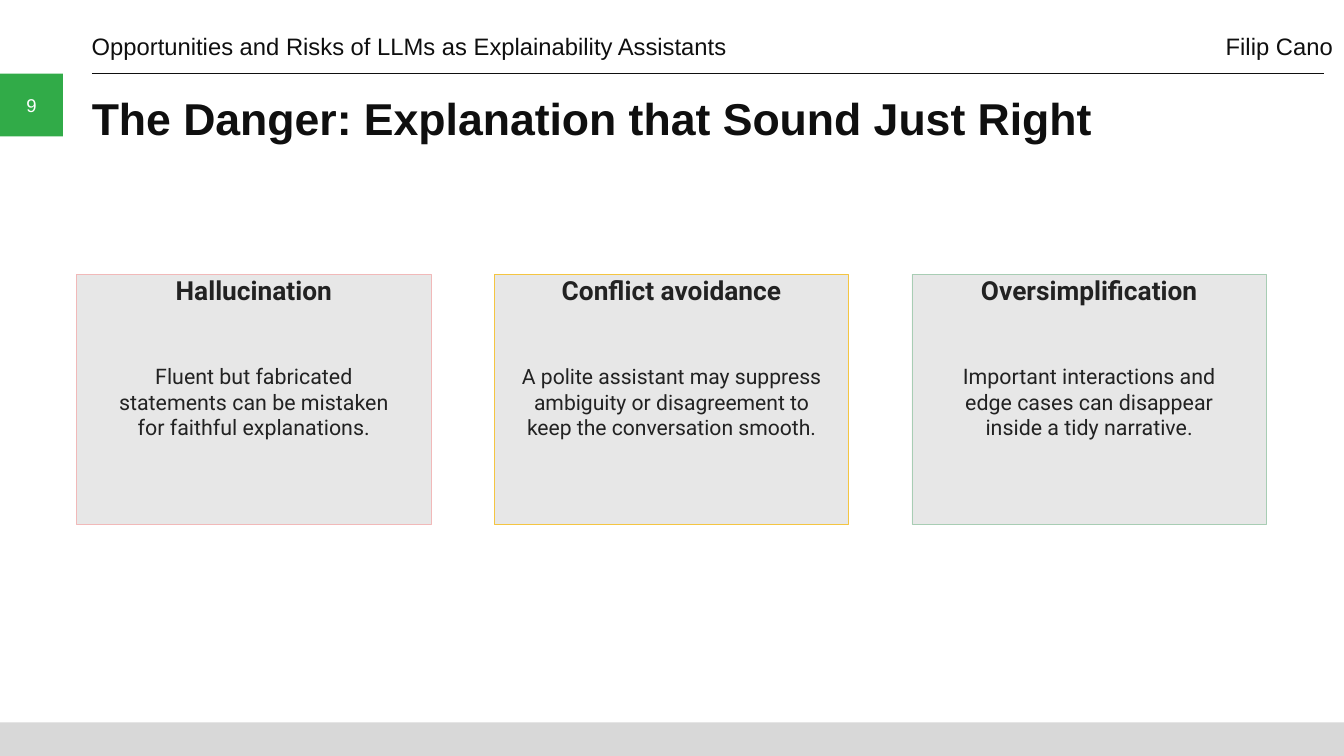
from dataclasses import dataclass

from lxml import etree
from pptx import Presentation
from pptx.dml.color import RGBColor as RGB
from pptx.enum.shapes import MSO_CONNECTOR as Connector, MSO_SHAPE as Shape
from pptx.enum.text import MSO_ANCHOR as Anchor, PP_ALIGN as Align
from pptx.oxml.ns import qn
from pptx.util import Inches, Pt

COLS, ROWS = 64, 36


@dataclass(frozen=True)
class Theme:
    ink: str = "0F0F0F"
    text: str = "222222"
    white: str = "FFFFFF"
    accent: str = "31AB48"
    bar: str = "D8D8D8"
    card: str = "E7E7E7"
    red: str = "F1B9B9"
    yellow: str = "F4C542"
    green: str = "A8CDB4"
    main_font: str = "Arial"
    card_font: str = "Roboto"
    title: float = 34
    heading: float = 20
    header: float = 18.1
    body: float = 16.3
    body_tight: float = 16.1
    number: float = 14.1
    rule: float = 0.75


class Deck:
    """Draws on the current slide; lengths are grid columns and rows."""

    def __init__(self, prs, theme):
        self.prs, self.theme = prs, theme
        self.s = prs.slides.add_slide(prs.slide_layouts[6])

    def x(self, cols):
        return round(self.prs.slide_width * cols / COLS)

    def y(self, rows):
        return round(self.prs.slide_height * rows / ROWS)

    def area(self, left, top, width, height):
        return self.x(left), self.y(top), self.x(width), self.y(height)

    def label(self, sp, text, align=Align.LEFT, anchor=Anchor.TOP, tab=None, **style):
        tf = sp.text_frame
        frame = dict(word_wrap=True, vertical_anchor=anchor, margin_left=0,
                     margin_right=0, margin_top=0, margin_bottom=0)
        for name, value in frame.items():
            setattr(tf, name, value)
        p = tf.paragraphs[0]
        p.alignment = align
        if tab:
            tabs = etree.SubElement(p._p.get_or_add_pPr(), qn("a:tabLst"))
            etree.SubElement(tabs, qn("a:tab"), pos=str(self.x(tab)), algn="r")
        r = p.add_run()
        r.text = text
        color = style.pop("color")
        for name, value in style.items():
            setattr(r.font, name, value)
        r.font.color.rgb = RGB.from_string(color)

    def text(self, area, text, **style):
        self.label(self.s.shapes.add_textbox(*self.area(*area)), text, **style)

    def box(self, area, fill, line=None):
        sp = self.s.shapes.add_shape(Shape.RECTANGLE, *self.area(*area))
        sp.shadow.inherit = False
        sp.fill.solid()
        sp.fill.fore_color.rgb = RGB.from_string(fill)
        if line:
            sp.line.color.rgb = RGB.from_string(line)
            sp.line.width = Pt(self.theme.rule)
        else:
            sp.line.fill.background()
        return sp

    def rule(self, left, right, row):
        line = self.s.shapes.add_connector(
            Connector.STRAIGHT, self.x(left), self.y(row), self.x(right), self.y(row))
        line.line.color.rgb = RGB.from_string(self.theme.ink)
        line.line.width = Pt(self.theme.rule)
        etree.SubElement(line._element.spPr, qn("a:effectLst"))

    def card(self, area, border, heading, body, size, inset):
        t = self.theme
        left, top, width, _ = area
        style = dict(align=Align.CENTER, name=t.card_font, color=t.text)
        self.label(self.box(area, t.card, border), heading,
                   size=Pt(t.heading), bold=True, **style)
        self.text((left + inset, top + 3.83, width - 2 * inset, 4.5), body,
                  anchor=Anchor.MIDDLE, size=Pt(size), **style)


def main():
    prs = Presentation()
    prs.slide_width, prs.slide_height = Inches(14.22), Inches(8)
    t = Theme()
    deck = Deck(prs, t)
    margin = 4.37

    # Page frame: number tab, footer bar and header rule
    number_tab = deck.box((0, 3.5, 3, 3), t.accent)
    deck.label(number_tab, "9", align=Align.CENTER, anchor=Anchor.MIDDLE,
               name=t.main_font, size=Pt(t.number), color=t.white)
    deck.box((0, 34.4, COLS, 1.6), t.bar)
    deck.rule(margin, 63.05, 3.5)

    # Title and running header
    deck.text((margin, 4.32, 58.78, 3.42), "The Danger: Explanation that Sound Just Right",
              name=t.main_font, size=Pt(t.title), color=t.ink, bold=True)
    deck.text((margin, 1.62, 59.14, 1.26),
              "Opportunities and Risks of LLMs as Explainability Assistants\tFilip Cano",
              anchor=Anchor.BOTTOM, tab=59.1,
              name=t.main_font, size=Pt(t.header), color=t.ink)

    # Three risk cards at an equal step
    cards = [
        (t.red, "Hallucination",
         "Fluent but fabricated statements can be mistaken for faithful explanations.",
         t.body, 1.35),
        (t.yellow, "Conflict avoidance",
         "A polite assistant may suppress ambiguity or disagreement to keep "
         "the conversation smooth.", t.body_tight, 1.12),
        (t.green, "Oversimplification",
         "Important interactions and edge cases can disappear inside a tidy narrative.",
         t.body, 1.35),
    ]
    first, step = 3.65, 19.89
    for i, content in enumerate(cards):
        deck.card((first + i * step, 13.05, 16.88, 11.93), *content)

    prs.save("out.pptx")


if __name__ == "__main__":
    main()
